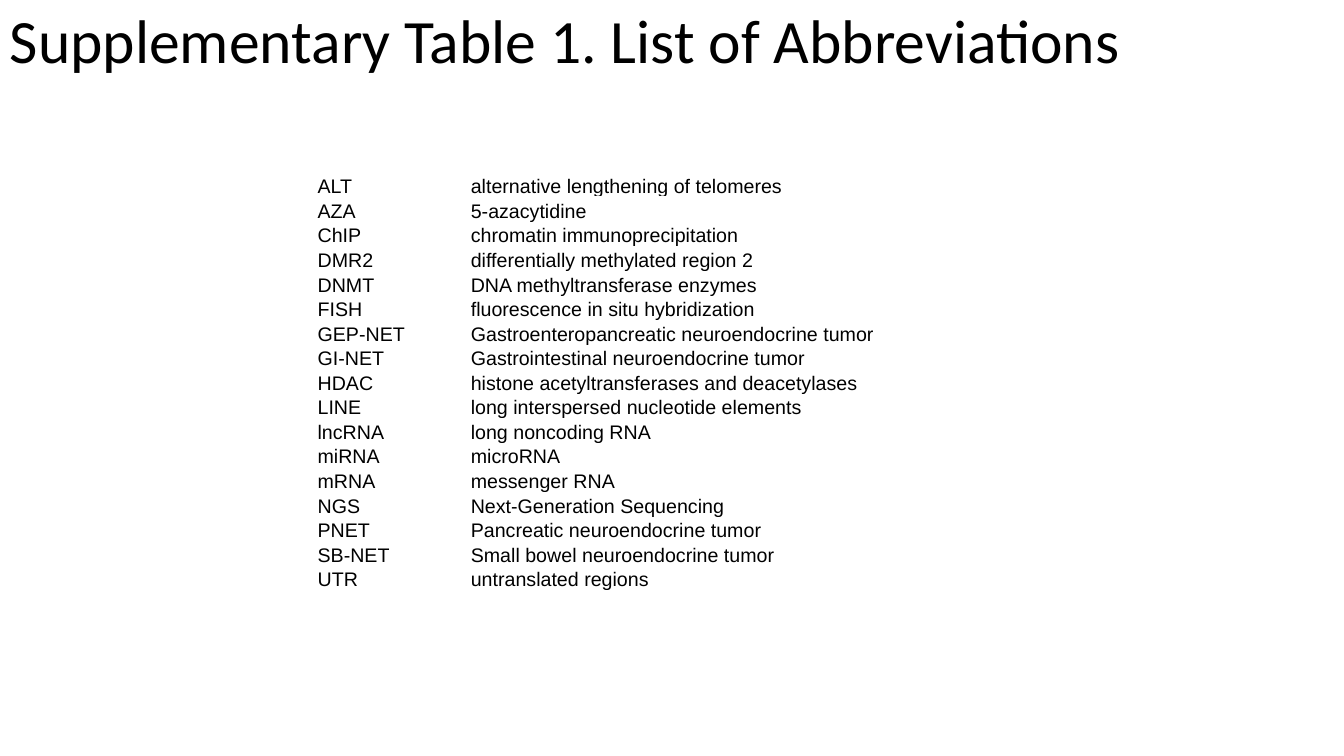
from lxml.etree import SubElement
from pptx import Presentation
from pptx.dml.color import RGBColor
from pptx.enum.text import MSO_ANCHOR as Anchor
from pptx.oxml.ns import qn
from pptx.util import Inches, Pt

COLORS = {"text": "000000", "border": "FFFFFF"}

ABBREVIATIONS = [
    ("ALT", "alternative lengthening of telomeres"),
    ("AZA", "5-azacytidine"),
    ("ChIP", "chromatin immunoprecipitation"),
    ("DMR2", "differentially methylated region 2"),
    ("DNMT", "DNA methyltransferase enzymes"),
    ("FISH", "fluorescence in situ hybridization"),
    ("GEP-NET", "Gastroenteropancreatic neuroendocrine tumor"),
    ("GI-NET", "Gastrointestinal neuroendocrine tumor"),
    ("HDAC", "histone acetyltransferases and deacetylases"),
    ("LINE", "long interspersed nucleotide elements"),
    ("lncRNA", "long noncoding RNA"),
    ("miRNA", "microRNA"),
    ("mRNA", "messenger RNA"),
    ("NGS", "Next-Generation Sequencing"),
    ("PNET", "Pancreatic neuroendocrine tumor"),
    ("SB-NET", "Small bowel neuroendocrine tumor"),
    ("UTR", "untranslated regions"),
]


def write_text(frame, text, *, font, size, spacing=None):
    frame.word_wrap = True
    para = frame.paragraphs[0]
    para.line_spacing = spacing
    span = para.add_run()
    span.text = text
    span.font.name = font
    span.font.size = Pt(size)
    span.font.color.rgb = RGBColor.from_string(COLORS["text"])


def add_border(cell, side, width):
    line = SubElement(cell._tc.get_or_add_tcPr(), qn(f"a:ln{side}"), w=str(Pt(width)))
    fill = SubElement(line, qn("a:solidFill"))
    SubElement(fill, qn("a:srgbClr"), val=COLORS["border"])


deck = Presentation()
deck.slide_width, deck.slide_height = Inches(13.33), Inches(7.5)
page = deck.slides.add_slide(deck.slide_layouts[6])

# Title
title = page.shapes.add_textbox(0, 0, Inches(12.38), Inches(0.86))
title.text_frame.vertical_anchor = Anchor.MIDDLE
write_text(title.text_frame, "Supplementary Table 1. List of Abbreviations",
           font="Calibri", size=44, spacing=0.9)

# Table of abbreviations
row_height = Inches(0.22)
table = page.shapes.add_table(len(ABBREVIATIONS), 2, Inches(3.14), Inches(1.72),
                              Inches(6.1), row_height * len(ABBREVIATIONS)).table
table.first_row = False
table.horz_banding = False
for column, width in zip(table.columns, (1.52, 4.58)):
    column.width = Inches(width)

for row_index, entry in enumerate(ABBREVIATIONS):
    table.rows[row_index].height = row_height
    for column_index, text in enumerate(entry):
        cell = table.cell(row_index, column_index)
        cell.margin_left = cell.margin_right = cell.margin_top = Inches(0.01)
        cell.margin_bottom = 0
        cell.vertical_anchor = Anchor.BOTTOM
        write_text(cell.text_frame, text, font="Arial", size=14)
        # A thicker rule separates the first row from the rest
        top_width = 3 if row_index == 1 else 1
        bottom_width = 3 if row_index == 0 else 1
        for side, width in zip("LRTB", (1, 1, top_width, bottom_width)):
            add_border(cell, side, width)
        cell.fill.background()

deck.save("out.pptx")
